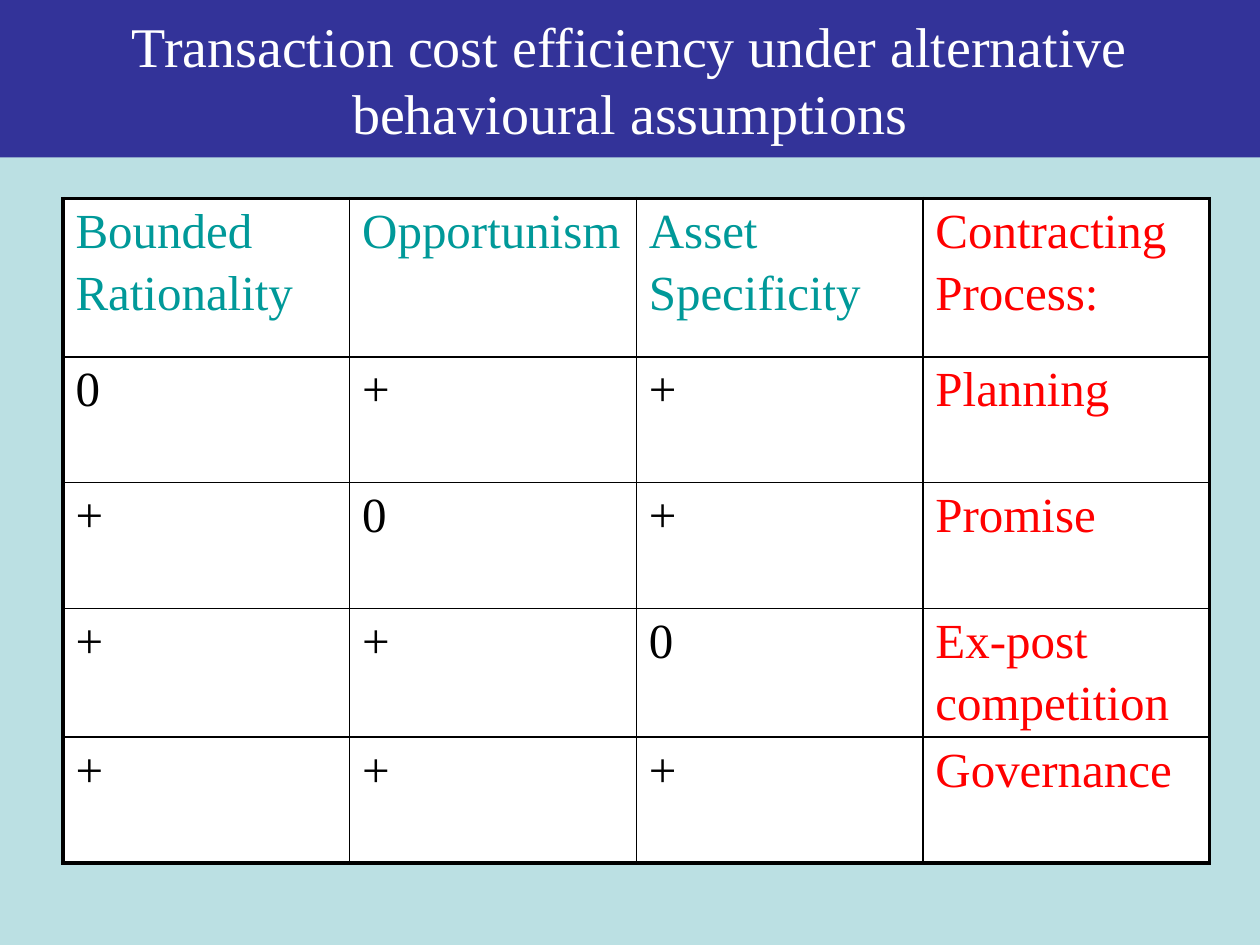
from dataclasses import dataclass

from lxml import etree
from pptx import Presentation
from pptx import util as u
from pptx.dml.color import RGBColor
from pptx.enum import shapes, text
from pptx.oxml.ns import qn


@dataclass(frozen=True)
class Theme:
    font: str = "Times New Roman"
    back: str = "BBE0E3"
    band: str = "333399"
    white: str = "FFFFFF"
    black: str = "000000"
    teal: str = "009999"
    red: str = "FF0000"
    head: float = 32
    body: float = 28
    gap: float = 4.4
    thin: float = 1
    thick: float = 2.25


T = Theme()
WIDE, HIGH = u.Inches(10), u.Inches(7.5)

TITLE = "Transaction cost efficiency under alternative behavioural assumptions"
ROWS = [
    ["Bounded\nRationality", "Opportunism", "Asset\nSpecificity", "Contracting\nProcess:"],
    ["0", "+", "+", "Planning"],
    ["+", "0", "+", "Promise"],
    ["+", "+", "0", "Ex-post\ncompetition"],
    ["+", "+", "+", "Governance"],
]


def paint(fill, color):
    fill.solid()
    fill.fore_color.rgb = RGBColor.from_string(color)


def style(para, size, color):
    for run in para.runs:
        run.font.name = T.font
        run.font.size = u.Pt(size)
        run.font.color.rgb = RGBColor.from_string(color)


def edge(cell, side, width):
    props = cell._tc.get_or_add_tcPr()
    line = etree.SubElement(props, qn(f"a:ln{side}"), w=str(u.Pt(width)))
    solid = etree.SubElement(line, qn("a:solidFill"))
    etree.SubElement(solid, qn("a:srgbClr"), val=T.black)


def banner(slide, box):
    """Title band filling the box."""
    band = slide.shapes.add_shape(shapes.MSO_SHAPE.RECTANGLE, *box)
    band.shadow.inherit = False
    paint(band.fill, T.band)
    band.line.fill.background()
    frame = band.text_frame
    frame.word_wrap = True
    frame.vertical_anchor = text.MSO_ANCHOR.MIDDLE
    frame.text = TITLE
    para = frame.paragraphs[0]
    para.alignment = text.PP_ALIGN.CENTER
    style(para, T.head, T.white)


def matrix(slide, box):
    """Table of assumptions, with a heavier outer frame."""
    high, wide = len(ROWS), len(ROWS[0])
    table = slide.shapes.add_table(high, wide, *box).table
    table.first_row = table.horz_banding = False

    # Equal columns; the head row is a quarter taller than the rest
    for col in table.columns:
        col.width = int(box[2] / wide)
    unit = box[3] / (high + 0.26)
    for r, row in enumerate(table.rows):
        row.height = int(unit * (1.26 if r == 0 else 1))

    for r, row in enumerate(ROWS):
        for c, words in enumerate(row):
            cell = table.cell(r, c)
            # Borders come before the fill
            outer = {"L": c == 0, "R": c == wide - 1, "T": r == 0, "B": r == high - 1}
            for side, rim in outer.items():
                edge(cell, side, T.thick if rim else T.thin)
            paint(cell.fill, T.white)

            # The last column is red, the other heads teal
            color = T.red if c == wide - 1 else T.teal if r == 0 else T.black
            cell.text_frame.text = words
            for para in cell.text_frame.paragraphs:
                para.space_before = u.Pt(T.gap)
                style(para, T.body, color)


def main():
    deck = Presentation()
    deck.slide_width, deck.slide_height = WIDE, HIGH
    slide = deck.slides.add_slide(deck.slide_layouts[6])
    paint(slide.background.fill, T.back)

    matrix(slide, (int(WIDE * 0.05), int(HIGH * 0.21), int(WIDE * 0.91), int(HIGH * 0.7)))
    banner(slide, (0, 0, WIDE, HIGH // 6))
    deck.save("out.pptx")


if __name__ == "__main__":
    main()
